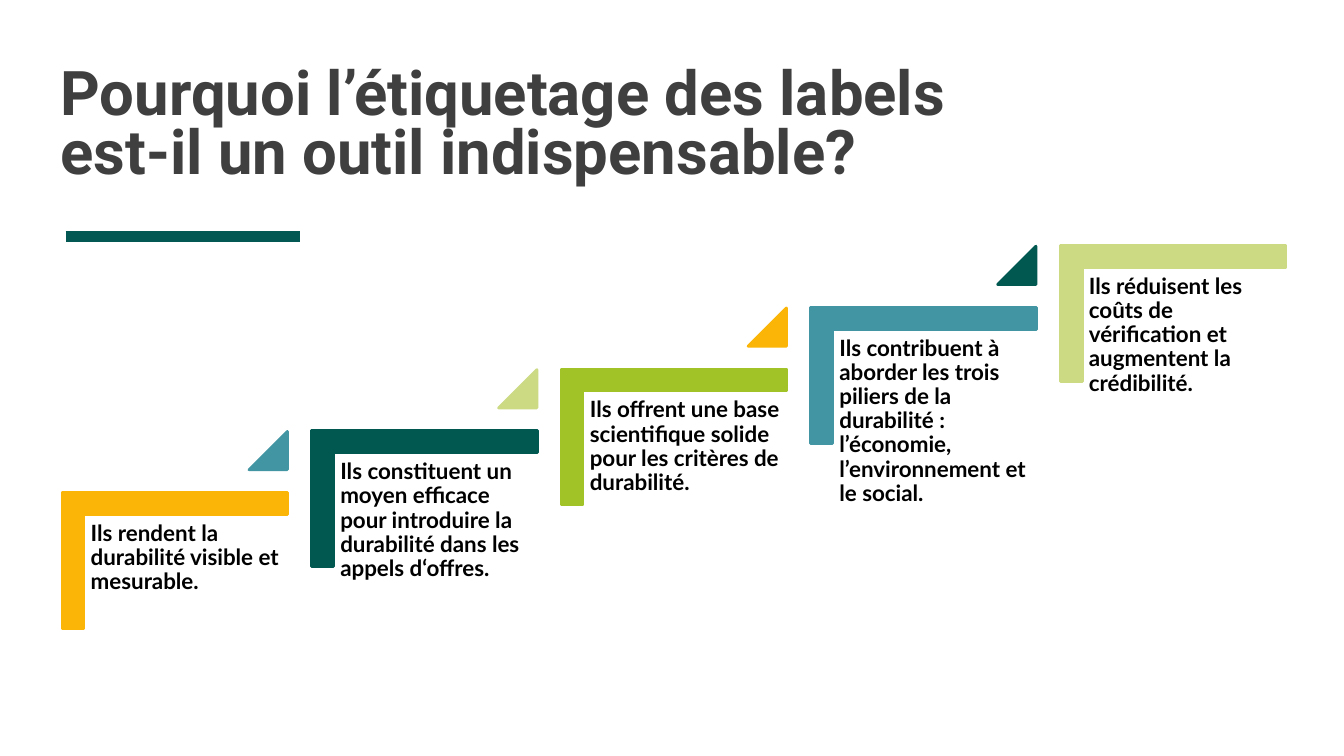
import pptx
import pptx.util
import pptx.dml.color
import pptx.enum.shapes
import pptx.enum.text
from lxml import etree

Inches = pptx.util.Inches
RGBColor = pptx.dml.color.RGBColor
Shapes = pptx.enum.shapes.MSO_SHAPE
Anchor = pptx.enum.text.MSO_ANCHOR

CHARCOAL = RGBColor(0x3F, 0x3F, 0x3F)
BLACK = RGBColor(0, 0, 0)
PINE = RGBColor(0x03, 0x58, 0x54)
AMBER = RGBColor(0xFA, 0xB5, 0x06)
FOREST = RGBColor(0x00, 0x58, 0x51)
LIME = RGBColor(0xA2, 0xC3, 0x28)
TEAL = RGBColor(0x42, 0x95, 0xA2)
PALE = RGBColor(0xCB, 0xDA, 0x83)

TITLE = ["Pourquoi l’étiquetage des labels ", "est-il un outil indispensable?"]
STEPS = [
    ("Ils rendent la durabilité visible et mesurable.", AMBER, TEAL),
    ("Ils constituent un moyen efficace pour introduire la durabilité dans les appels d‘offres.",
     FOREST, PALE),
    ("Ils offrent une base scientifique solide pour les critères de durabilité.", LIME, AMBER),
    ("Ils contribuent à aborder les trois piliers de la durabilité : l’économie, "
     "l’environnement et le social.", TEAL, FOREST),
    ("Ils réduisent les coûts de vérification et augmentent la crédibilité.", PALE, None),
]
STEP_RIGHT = 9.9 / 4
STEP_UP = 2.45 / 4


class StairSlide:
    title_style = {"name": "Roboto", "size": pptx.util.Pt(44), "bold": True}
    step_style = {"name": "Lato", "size": pptx.util.Pt(16), "bold": True}

    def __init__(self, deck):
        self.slide = deck.slides.add_slide(deck.slide_layouts[6])

    def text(self, place, lines, style, color, spacing, inset, anchor):
        box = self.slide.shapes.add_textbox(*map(Inches, place))
        frame = box.text_frame
        settings = {"word_wrap": True, "vertical_anchor": anchor}
        for side in ("left", "top", "right", "bottom"):
            settings["margin_" + side] = Inches(inset)
        for name, value in settings.items():
            setattr(frame, name, value)
        para = frame.paragraphs[0]
        para.line_spacing = spacing
        for index, line in enumerate(lines):
            if index:
                para.add_line_break()
            span = para.add_run()
            span.text = line
            for name, value in style.items():
                setattr(span.font, name, value)
            span.font.color.rgb = color

    def shape(self, kind, place, color, adjustments, rotation=0):
        shape = self.slide.shapes.add_shape(kind, *map(Inches, place))
        shape.shadow.inherit = False
        shape.rotation = rotation
        for index, value in enumerate(adjustments):
            shape.adjustments[index] = value
        shape.fill.solid()
        shape.fill.fore_color.rgb = color
        shape.line.color.rgb = color
        shape.line.width = pptx.util.Pt(2)

    def rule(self, ends, color, width):
        straight = pptx.enum.shapes.MSO_CONNECTOR.STRAIGHT
        line = self.slide.shapes.add_connector(straight, *map(Inches, ends))
        line.line.color.rgb = color
        line.line.width = pptx.util.Pt(width)
        properties = line._element.spPr
        etree.SubElement(properties, pptx.oxml.ns.qn("a:effectLst"))

    def step(self, index, words, color, marker):
        right, up = index * STEP_RIGHT, index * STEP_UP
        self.shape(Shapes.CORNER, (1.06 + right, 4.44 - up, 1.35, 2.24), color,
                   (0.161, 0.161), 90)
        self.text((0.83 + right, 5.11 - up, 2.02, 1.77), [words], self.step_style,
                  BLACK, 0.9, 0.07, Anchor.TOP)
        if marker is not None:
            self.shape(Shapes.ISOSCELES_TRIANGLE, (2.47 + right, 4.28 - up, 0.38, 0.38),
                       marker, (1,))


def main():
    deck = pptx.Presentation()
    deck.slide_width = Inches(13.33)
    deck.slide_height = Inches(7.5)
    page = StairSlide(deck)
    page.rule((0.65, 2.35, 2.98, 2.35), PINE, 8)
    page.text((0.6, 0.76, 12.03, 1), TITLE, page.title_style, CHARCOAL, 0.8, 0, Anchor.MIDDLE)
    for index, (words, color, marker) in enumerate(STEPS):
        page.step(index, words, color, marker)
    deck.save("out.pptx")


if __name__ == "__main__":
    main()
